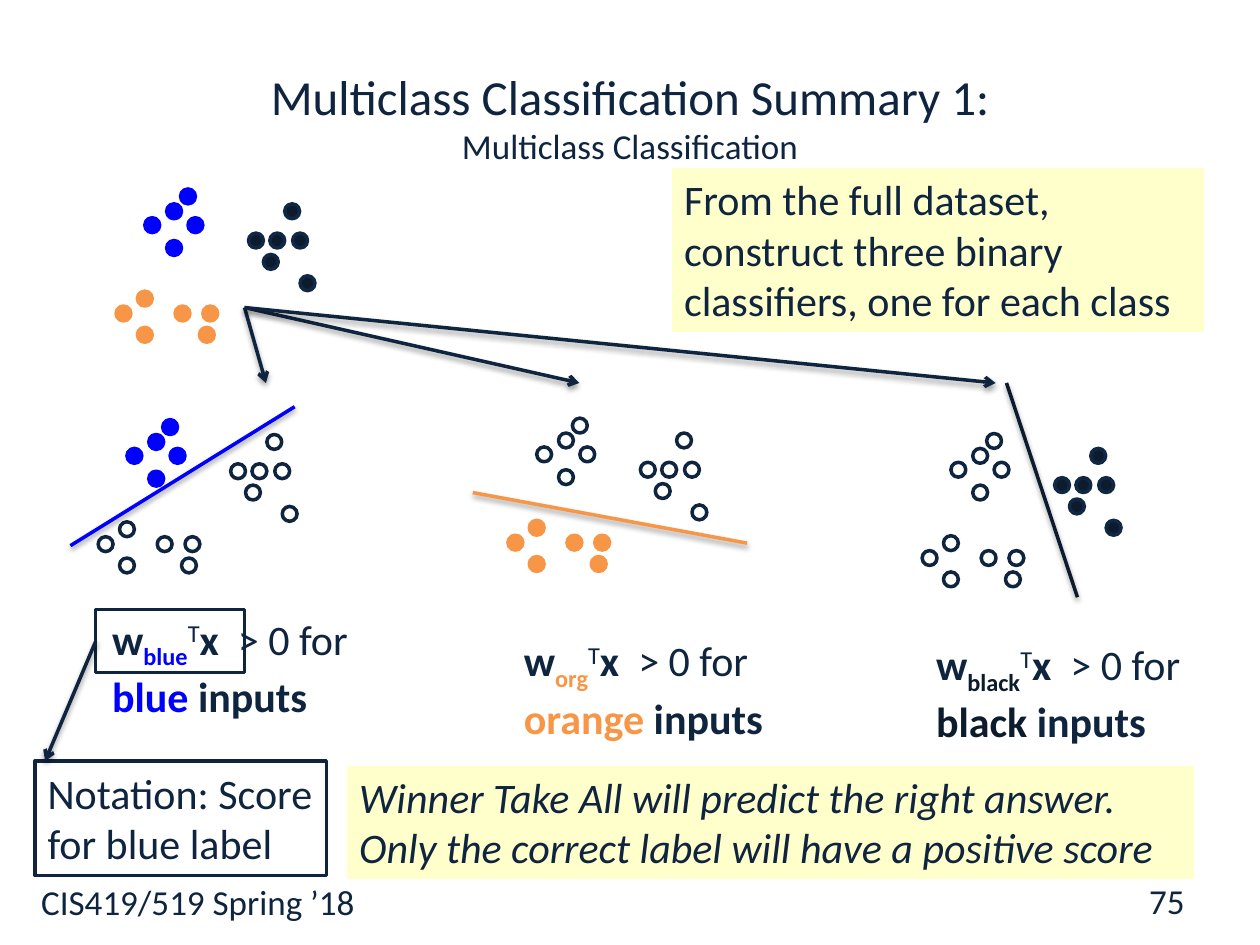
import pptx
import pptx.util
import pptx.dml.color
import pptx.enum.shapes
import pptx.enum.text
import pptx.oxml
import pptx.oxml.ns

Cm = pptx.util.Cm
Pt = pptx.util.Pt
RGBColor = pptx.dml.color.RGBColor
SHAPE = pptx.enum.shapes.MSO_SHAPE
STRAIGHT = pptx.enum.shapes.MSO_CONNECTOR.STRAIGHT
ALIGN = pptx.enum.text.PP_ALIGN
ANCHOR = pptx.enum.text.MSO_ANCHOR
AUTO_SIZE = pptx.enum.text.MSO_AUTO_SIZE

NAVY = RGBColor(0x0F, 0x24, 0x3E)
BLACK = RGBColor(0x0C, 0x1B, 0x2E)
BLACK_EDGE = RGBColor(0x11, 0x28, 0x45)
BLUE = RGBColor(0x00, 0x00, 0xFF)
ORANGE = RGBColor(0xF7, 0x96, 0x46)
YELLOW = RGBColor(0xFF, 0xFF, 0xCC)
WHITE = RGBColor(0xFF, 0xFF, 0xFF)


def add_run(paragraph, text, size=24, color=NAVY, bold=False, italic=False, baseline=0):
    """Add a run; baseline is the raise (or drop, if negative) in percent."""
    run = paragraph.add_run()
    run.text = text
    run.font.name = "Calibri"
    run.font.size = Pt(size)
    run.font.color.rgb = color
    run.font.bold = bold
    run.font.italic = italic
    if baseline:
        run._r.get_or_add_rPr().set("baseline", str(baseline * 1000))


def add_line(shapes, start, end, color=NAVY, arrow=False):
    """Add a straight line that keeps the theme's soft shadow."""
    line = shapes.add_connector(STRAIGHT, *map(Cm, start + end))
    line.line.color.rgb = color
    line.line.width = Pt(2)
    if arrow:
        line.line._get_or_add_ln().append(pptx.oxml.parse_xml(
            f'<a:tailEnd {pptx.oxml.ns.nsdecls("a")} type="arrow"/>'))
    return line


prs = pptx.Presentation()
prs.slide_width, prs.slide_height = Cm(25.4), Cm(19.05)
slide = prs.slides.add_slide(prs.slide_layouts[5])

# Title
title = slide.shapes.title
title.left, title.top, title.width, title.height = Cm(1.27), Cm(0.76), Cm(22.86), Cm(3.18)
title.text_frame.auto_size = AUTO_SIZE.NONE
title.text_frame.vertical_anchor = ANCHOR.MIDDLE
heading = title.text_frame.paragraphs[0]
heading.alignment = ALIGN.CENTER
add_run(heading, "Multiclass Classification Summary 1:", 28)
heading.add_line_break()
add_run(heading, "Multiclass Classification", 20)

# Course name and page number
for text, box, align, anchor in [
    ("CIS419/519 Spring ’18", (0.58, 17.63, 17, 1.42), ALIGN.LEFT, ANCHOR.TOP),
    ("75", (18.21, 17.65, 5.92, 1.02), ALIGN.RIGHT, ANCHOR.MIDDLE),
]:
    footer = slide.shapes.add_textbox(*map(Cm, box)).text_frame
    footer.word_wrap = True
    footer.vertical_anchor = anchor
    footer.paragraphs[0].alignment = align
    add_run(footer.paragraphs[0], text, 20)

# Full dataset, then one binary problem per class; dots are offset from the scatter's corner
class_colors = {"blue": (BLUE, BLUE), "orange": (ORANGE, ORANGE), "black": (BLACK, BLACK_EDGE)}
class_dots = {
    "blue": [(1.02, 0.3), (1.3, 0), (0.58, 0.58), (1.45, 0.58), (1.02, 1.04)],
    "orange": [(1.75, 2.36), (0.43, 2.06), (1.19, 2.36), (0, 2.36), (1.68, 2.79), (0.43, 2.79)],
    "black": [(2.97, 1.32), (3.71, 1.75), (3.4, 0.3), (2.67, 0.89), (3.56, 0.89), (3.1, 0.89)],
}
# corner, positive class, weight subscript, separator ends, label position and width
scatters = [
    ((2.34, 3.81), None, None, None, None),
    ((1.98, 8.46), "blue", "blue", ((1.42, 11), (5.94, 8.2)), (2.01, 12.24, 5.54)),
    ((10.24, 8.43), "orange", "org", ((9.53, 9.93), (15.06, 10.95)), (10.31, 12.67, 6.25)),
    ((18.59, 8.74), "black", "black", ((20.29, 7.72), (21.72, 12.04)), (18.62, 12.75, 6.35)),
]
for (left, top), positive, subscript, separator, label_box in scatters:
    scatter = slide.shapes.add_group_shape().shapes
    for name, dots in class_dots.items():
        fill, edge = class_colors[name] if positive in (None, name) else (WHITE, NAVY)
        for x, y in dots:
            dot = scatter.add_shape(SHAPE.OVAL, Cm(left + x), Cm(top + y), Cm(0.3), Cm(0.3))
            dot.shadow.inherit = False
            dot.fill.solid()
            dot.fill.fore_color.rgb = fill
            dot.line.color.rgb = edge
            dot.line.width = Pt(2)
    if positive is None:
        continue
    color = class_colors[positive][0]
    add_line(scatter, *separator, color)
    label = scatter.add_textbox(*map(Cm, label_box), Cm(2.31)).text_frame
    label.word_wrap = True
    label.auto_size = AUTO_SIZE.SHAPE_TO_FIT_TEXT
    rule = label.paragraphs[0]
    add_run(rule, "w", bold=True)
    add_run(rule, subscript, color=color, bold=True, baseline=-25)
    add_run(rule, "T", baseline=30)
    add_run(rule, "x ", bold=True)
    add_run(rule, " > 0 for ")
    add_run(rule, positive, color=color, bold=True)
    add_run(rule, " inputs", bold=True)

# Comments
for text, box, fill, edge, width, italic in [
    ("From the full dataset, construct three binary classifiers, one for each class",
     (13.54, 3.38, 10.74, 3.33), YELLOW, WHITE, 0.75, False),
    ("Winner Take All will predict the right answer. "
     "Only the correct label will have a positive score",
     (6.99, 15.42, 17.09, 2.31), YELLOW, WHITE, 0.75, True),
    ("Notation: Score for blue label", (0.71, 15.34, 5.87, 2.31), WHITE, NAVY, 2, False),
]:
    comment = slide.shapes.add_shape(SHAPE.RECTANGLE, *map(Cm, box))
    comment.shadow.inherit = False
    comment.fill.solid()
    comment.fill.fore_color.rgb = fill
    comment.line.color.rgb = edge
    comment.line.width = Pt(width)
    frame = comment.text_frame
    frame.word_wrap = True
    frame.auto_size = AUTO_SIZE.SHAPE_TO_FIT_TEXT
    frame.vertical_anchor = ANCHOR.TOP
    frame.paragraphs[0].alignment = ALIGN.LEFT
    add_run(frame.paragraphs[0], text, italic=italic)

# Frame around the blue score, pointing to its notation
score_frame = slide.shapes.add_shape(SHAPE.RECTANGLE, Cm(1.93), Cm(12.29), Cm(3), Cm(1.27))
score_frame.shadow.inherit = False
score_frame.fill.background()
score_frame.line.color.rgb = NAVY
score_frame.line.width = Pt(2)
notation_arrow = add_line(slide.shapes, (1.93, 12.93), (0.91, 15.34), arrow=True)
notation_arrow.begin_connect(score_frame, 1)

# Full dataset to the three binary problems
for target_x in (5.36, 11.68, 20.07):
    add_line(slide.shapes, (4.93, 6.2), (target_x, 7.72), arrow=True)

prs.save("out.pptx")
